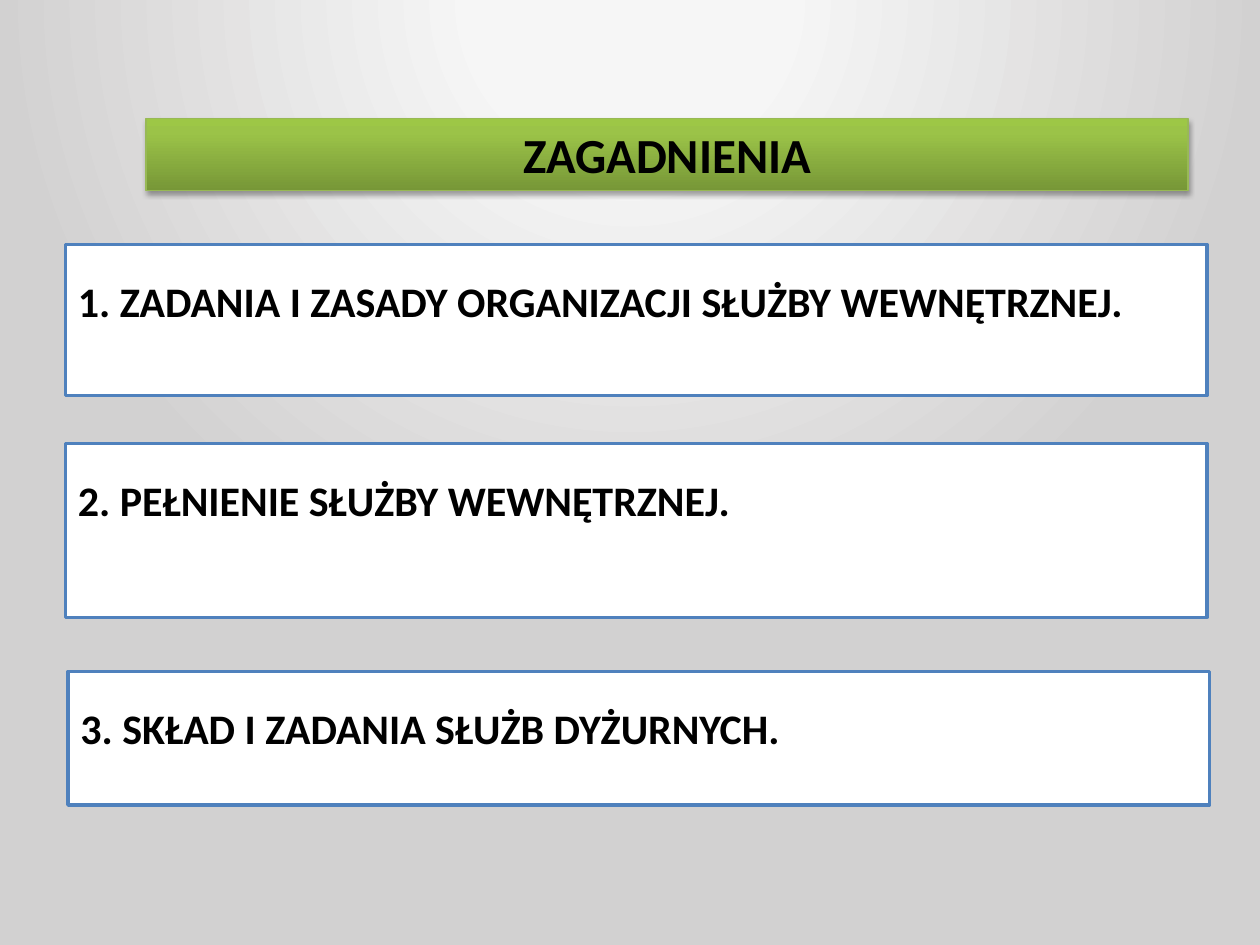
from dataclasses import dataclass

from lxml import etree
from pptx import Presentation
from pptx.dml.color import RGBColor
from pptx.enum.shapes import MSO_SHAPE
from pptx.enum.text import MSO_ANCHOR, PP_ALIGN
from pptx.oxml import parse_xml
from pptx.oxml.ns import nsdecls, qn
from pptx.util import Inches, Pt

RECTANGLE = MSO_SHAPE.RECTANGLE
TOP = MSO_ANCHOR.TOP
LEFT, CENTER = PP_ALIGN.LEFT, PP_ALIGN.CENTER


@dataclass(frozen=True)
class Theme:
    font: str = "Calibri"
    heading_size: int = 28
    topic_size: int = 24
    text: str = "000000"
    panel: str = "FFFFFF"
    panel_border: str = "4F81BD"
    heading_border: str = "98B955"
    heading_stops: tuple = ((0, "779737"), (80, "9BC348"), (100, "9DC746"))
    backdrop_stops: tuple = ((19, "F6F6F6"), (81, "D2D1D1"))


THEME = Theme()


def set_gradient(fill, properties, stops, direction):
    fill.gradient()
    gradient = properties.find(qn("a:gradFill"))
    stop_xml = "".join(
        f'<a:gs pos="{percent * 1000}"><a:srgbClr val="{color}"/></a:gs>'
        for percent, color in stops
    )
    properties.replace(gradient, parse_xml(
        f'<a:gradFill {nsdecls("a")} rotWithShape="1">'
        f"<a:gsLst>{stop_xml}</a:gsLst>{direction}</a:gradFill>"
    ))


def paint_backdrop(slide):
    fill = slide.background.fill
    properties = slide.element.find(".//" + qn("p:bgPr"))
    set_gradient(
        fill, properties, THEME.backdrop_stops,
        '<a:path path="circle">'
        '<a:fillToRect l="43000" t="0" r="43000" b="100000"/></a:path>',
    )


def add_panel(slide, box, border, border_width, text, size, align):
    panel = slide.shapes.add_shape(RECTANGLE, *map(Inches, box))
    panel.shadow.inherit = False
    panel.line.color.rgb = RGBColor.from_string(border)
    panel.line.width = Pt(border_width)
    frame = panel.text_frame
    frame.word_wrap = True
    frame.vertical_anchor = TOP
    paragraph = frame.paragraphs[0]
    paragraph.alignment = align
    run = paragraph.add_run()
    run.text = text
    run.font.name = THEME.font
    run.font.size = Pt(size)
    run.font.bold = True
    run.font.color.rgb = RGBColor.from_string(THEME.text)
    return panel


def add_heading(slide, box, text):
    heading = add_panel(slide, box, THEME.heading_border, 0.75,
                        text, THEME.heading_size, CENTER)
    properties = heading.element.spPr
    set_gradient(heading.fill, properties, THEME.heading_stops,
                 '<a:lin ang="16200000" scaled="0"/>')
    effects = properties.find(qn("a:effectLst"))
    shadow = etree.SubElement(
        effects, qn("a:outerShdw"), blurRad=str(Pt(3.1)), dist=str(Pt(1.8)),
        dir="5400000", rotWithShape="0",
    )
    shadow_color = etree.SubElement(shadow, qn("a:srgbClr"), val=THEME.text)
    etree.SubElement(shadow_color, qn("a:alpha"), val="35000")


def add_topic(slide, box, text):
    topic = add_panel(slide, box, THEME.panel_border, 2,
                      text, THEME.topic_size, LEFT)
    topic.fill.solid()
    topic.fill.fore_color.rgb = RGBColor.from_string(THEME.panel)
    topic.text_frame.paragraphs[0].line_spacing = 1.5


def main():
    deck = Presentation()
    deck.slide_width, deck.slide_height = Inches(10), Inches(7.5)
    slide = deck.slides.add_slide(deck.slide_layouts[6])
    paint_backdrop(slide)
    topics = (
        (0.52, 1.94, 1.2, "1. ZADANIA I ZASADY ORGANIZACJI SŁUŻBY WEWNĘTRZNEJ."),
        (0.52, 3.52, 1.38, "2. PEŁNIENIE SŁUŻBY WEWNĘTRZNEJ."),
        (0.54, 5.33, 1.06, "3. SKŁAD I ZADANIA SŁUŻB DYŻURNYCH."),
    )
    for left, top, height, text in topics:
        add_topic(slide, (left, top, 9.06, height), text)
    add_heading(slide, (1.16, 0.94, 8.27, 0.57), "ZAGADNIENIA")
    deck.save("out.pptx")


if __name__ == "__main__":
    main()
